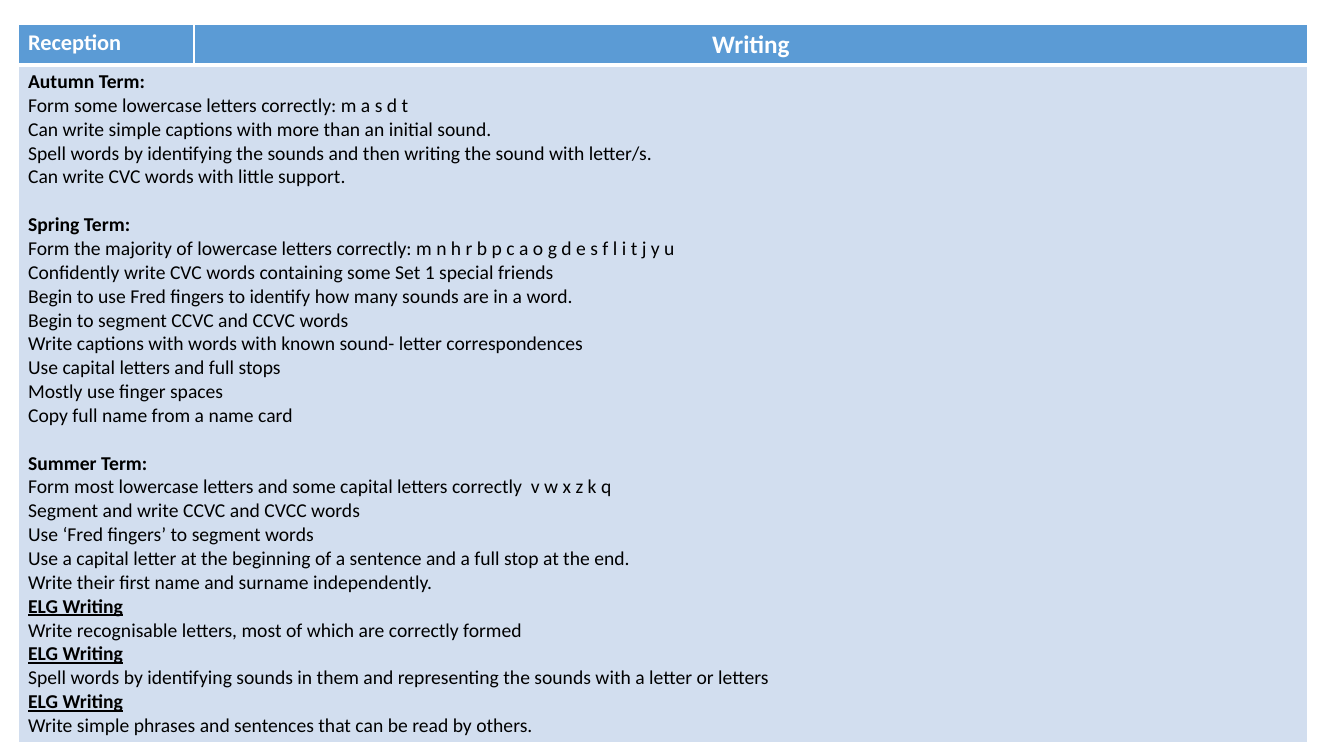
from lxml import etree
from pptx import Presentation
from pptx.dml.color import RGBColor
from pptx.enum.text import PP_ALIGN
from pptx.oxml.ns import qn
from pptx.util import Pt

LEFT, CENTER = PP_ALIGN.LEFT, PP_ALIGN.CENTER
WHITE = RGBColor(0xFF, 0xFF, 0xFF)
BLACK = RGBColor(0x00, 0x00, 0x00)
BLUE = RGBColor(0x5B, 0x9B, 0xD5)
PALE = RGBColor(0xD2, 0xDE, 0xEF)
FONT = "Calibri"

TERMS = [
    ("Autumn Term:", [
        "Form some lowercase letters correctly: m a s d t",
        "Can write simple captions with more than an initial sound.",
        "Spell words by identifying the sounds and then writing the sound with letter/s.",
        "Can write CVC words with little support.",
    ]),
    ("Spring Term:", [
        "Form the majority of lowercase letters correctly: "
        "m n h r b p c a o g d e s f l i t j y u",
        "Confidently write CVC words containing some Set 1 special friends",
        "Begin to use Fred fingers to identify how many sounds are in a word.",
        "Begin to segment CCVC and CCVC words",
        "Write captions with words with known sound- letter correspondences",
        "Use capital letters and full stops",
        "Mostly use finger spaces",
        "Copy full name from a name card",
    ]),
    ("Summer Term:", [
        "Form most lowercase letters and some capital letters correctly  v w x z k q",
        "Segment and write CCVC and CVCC words",
        "Use ‘Fred fingers’ to segment words",
        "Use a capital letter at the beginning of a sentence and a full stop at the end.",
        "Write their first name and surname independently.",
    ]),
]
GOAL = "ELG Writing"
GOALS = [
    "Write recognisable letters, most of which are correctly formed",
    "Spell words by identifying sounds in them and representing the sounds "
    "with a letter or letters",
    "Write simple phrases and sentences that can be read by others.",
]

PX = 914400 / 100.8
SIDE, TOP = 18, 24
COLS = (176, 1114)
ROWS = (40, 677)
TERM_GAP = 17


def px(n):
    return round(n * PX)


def write(cell, text, size=14, color=BLACK, bold=False, line=False,
          align=LEFT, gap=0):
    """Fill the cell's empty first paragraph, or add one below the others."""
    frame = cell.text_frame
    para = frame.paragraphs[0] if not frame.text else frame.add_paragraph()
    para.alignment = align
    para.space_before = Pt(gap)
    run = para.add_run()
    run.text = text
    font = run.font
    font.name, font.size, font.bold, font.underline = FONT, Pt(size), bold, line
    font.color.rgb = color


def paint(cell, fill, top=1, bottom=1):
    """Give the cell white borders, in points, and a solid fill."""
    props = cell._tc.get_or_add_tcPr()
    for tag, width in (("lnL", 1), ("lnR", 1), ("lnT", top), ("lnB", bottom)):
        edge = etree.SubElement(props, qn("a:" + tag), w=str(Pt(width)))
        solid = etree.SubElement(edge, qn("a:solidFill"))
        etree.SubElement(solid, qn("a:srgbClr"), val=str(WHITE))
    cell.fill.solid()
    cell.fill.fore_color.rgb = fill


def main():
    deck = Presentation()
    deck.slide_width, deck.slide_height = px(1344), px(756)
    slide = deck.slides.add_slide(deck.slide_layouts[6])
    table = slide.shapes.add_table(
        len(ROWS), len(COLS), px(SIDE), px(TOP), px(sum(COLS)), px(sum(ROWS))).table
    for col, width in zip(table.columns, COLS):
        col.width = px(width)
    for row, height in zip(table.rows, ROWS):
        row.height = px(height)

    year, topic = table.rows[0].cells
    write(year, "Reception", size=16, color=WHITE, bold=True)
    write(topic, "Writing", size=18, color=WHITE, bold=True, align=CENTER)
    body = table.cell(1, 0)
    body.merge(table.cell(1, 1))
    for cell in (year, topic):
        paint(cell, BLUE, bottom=3)
    for cell in table.rows[1].cells:
        paint(cell, PALE, top=3)

    for i, (term, aims) in enumerate(TERMS):
        write(body, term, bold=True, gap=TERM_GAP if i else 0)
        for aim in aims:
            write(body, aim)
    for goal in GOALS:
        write(body, GOAL, bold=True, line=True)
        write(body, goal)
    deck.save("out.pptx")


if __name__ == "__main__":
    main()
